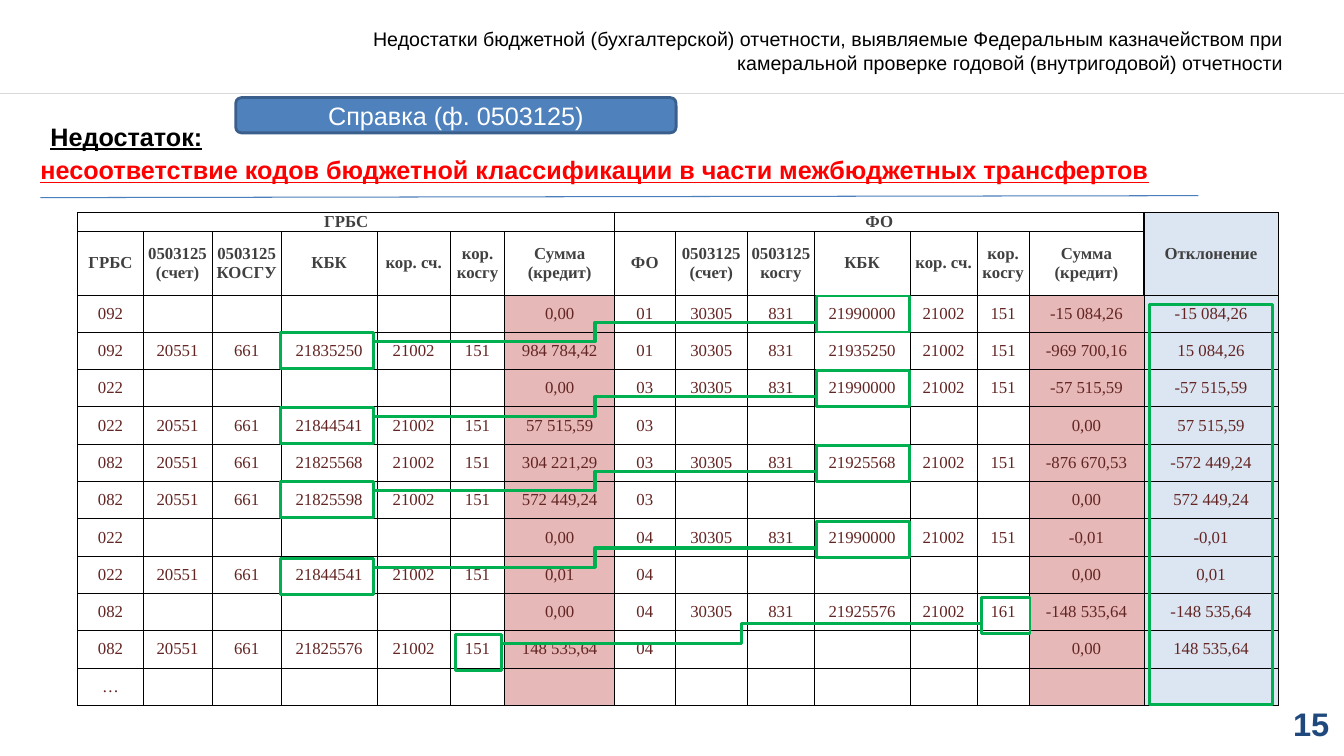
from lxml import etree
from pptx import Presentation
from pptx import util as u
from pptx.dml.color import RGBColor
from pptx.enum import shapes, text
from pptx.oxml.ns import qn

GREEN = RGBColor(0x00, 0xB0, 0x50)
ROSE = RGBColor(0xE6, 0xB8, 0xB7)
PALE_BLUE = RGBColor(0xDC, 0xE6, 0xF2)
BANNER_BLUE = RGBColor(0x4F, 0x81, 0xBD)
BANNER_EDGE = RGBColor(0x3A, 0x5F, 0x8C)
RULE_BLUE = RGBColor(0x4B, 0x7E, 0xBC)
RULE_GREY = RGBColor(0xD9, 0xD9, 0xD9)
NAVY = RGBColor(0x1F, 0x49, 0x7D)
HEADING_GREY = RGBColor(0x40, 0x40, 0x40)
FIGURE_BROWN = RGBColor(0x63, 0x25, 0x23)
RED = RGBColor(0xFF, 0x00, 0x00)
BLACK = RGBColor(0x00, 0x00, 0x00)
WHITE = RGBColor(0xFF, 0xFF, 0xFF)

LEFT, RIGHT = text.PP_ALIGN.LEFT, text.PP_ALIGN.RIGHT
CENTER, JUSTIFY = text.PP_ALIGN.CENTER, text.PP_ALIGN.JUSTIFY

CAPTIONS = [
    ("15", (25.7, 17.75, 7.8, 0.99), 0, RIGHT,
     {"size": u.Pt(23.3), "bold": True}, NAVY),
    ("несоответствие кодов бюджетной классификации в части межбюджетных трансфертов",
     (1.02, 3.89, 31.34, 1.07), 0, JUSTIFY,
     {"size": u.Pt(18), "bold": True, "underline": True}, RED),
    ("Недостаток:", (1.02, 2.92, 6.1, 1.02), 1, LEFT,
     {"size": u.Pt(18), "bold": True, "underline": True}, BLACK),
    ("Недостатки бюджетной (бухгалтерской) отчетности, выявляемые Федеральным "
     "казначейством при камеральной проверке годовой (внутригодовой) отчетности",
     (8.64, 0.56, 23.95, 1.45), 1, RIGHT, {"size": u.Pt(14)}, BLACK),
]
BANNER = ("Справка (ф. 0503125)", (5.94, 2.46, 11.1, 0.89))
RULES = [((0, 2.36), (33.87, 2.36), RULE_GREY, 1),
         ((1.02, 4.98), (30.2, 4.93), RULE_BLUE, 0.75)]

GROUPS = {0: "ГРБС", 7: "ФО", 14: "Отклонение"}
HEADINGS = ["ГРБС", "0503125\n(счет)", "0503125 КОСГУ", "КБК", "кор. сч.", "кор. косгу",
            "Сумма\n(кредит)", "ФО", "0503125\n(счет)", "0503125\nкосгу", "КБК",
            "кор. сч.", "кор. косгу", "Сумма\n(кредит)", ""]
ENTRIES = [
    "092||||||0,00|01|30305|831|21990000|21002|151|-15 084,26|-15 084,26",
    "092|20551|661|21835250|21002|151|984 784,42|01|30305|831|21935250|21002|151|-969 700,16|15 084,26",
    "022||||||0,00|03|30305|831|21990000|21002|151|-57 515,59|-57 515,59",
    "022|20551|661|21844541|21002|151|57 515,59|03||||||0,00|57 515,59",
    "082|20551|661|21825568|21002|151|304 221,29|03|30305|831|21925568|21002|151|-876 670,53|-572 449,24",
    "082|20551|661|21825598|21002|151|572 449,24|03||||||0,00|572 449,24",
    "022||||||0,00|04|30305|831|21990000|21002|151|-0,01|-0,01",
    "022|20551|661|21844541|21002|151|0,01|04||||||0,00|0,01",
    "082||||||0,00|04|30305|831|21925576|21002|161|-148 535,64|-148 535,64",
    "082|20551|661|21825576|21002|151|148 535,64|04||||||0,00|148 535,64",
    "…||||||||||||||",
]
COLUMN_WIDTHS = [1.65, 1.73, 1.75, 2.41, 1.85, 1.37, 2.77, 1.52, 1.83, 1.68, 2.41, 1.7,
                 1.3, 2.9, 3.38]
ROW_HEIGHTS = [0.47, 1.6] + [0.94] * len(ENTRIES)
TABLE_LEFT, TABLE_TOP = 1.96, 5.36
SUM_COLUMNS, DEVIATION_COLUMN = (6, 13), 14
GROUP_STARTS, GROUP_ENDS = (0, 7, 14), (6, 13, 14)

KBK_PAIR = ((7.06, 2.36), (20.57, 2.36))
KOSGU_PAIR = ((11.48, 1.17), (24.74, 1.22))
MISMATCHES = [(8.38, KBK_PAIR), (10.26, KBK_PAIR), (12.14, KBK_PAIR),
              (14.07, KBK_PAIR), (15.98, KOSGU_PAIR)]
FRAME_HEIGHT, FRAME_RISE = 0.91, 0.92
LINK_START, LINK_END = 0.23, 0.66
DEVIATION_FRAME = (28.96, 7.67, 3.1, 10.08)


def cm(values):
    return [u.Cm(value) for value in values]


def write(paragraph, wording, align, look, color):
    paragraph.text = wording
    paragraph.alignment = align
    for run in paragraph.runs:
        for key, value in look.items():
            setattr(run.font, key, value)
        run.font.color.rgb = color


def draw_line(kind, start, end, color, width):
    line = slide.shapes.add_connector(kind, *cm(start + end))
    line.line.color.rgb = color
    line.line.width = u.Pt(width)
    etree.SubElement(line._element.spPr, qn("a:effectLst"))


def draw_frame(box):
    frame = slide.shapes.add_shape(shapes.MSO_SHAPE.RECTANGLE, *cm(box))
    frame.shadow.inherit = False
    frame.fill.background()
    frame.line.color.rgb = GREEN
    frame.line.width = u.Pt(2)


def draw_borders(cell, widths):
    properties = cell._tc.get_or_add_tcPr()
    for place, (side, width) in enumerate(widths.items()):
        border = etree.Element(qn("a:ln" + side), w=str(u.Pt(width)))
        fill = etree.SubElement(border, qn("a:solidFill"))
        etree.SubElement(fill, qn("a:srgbClr"), val=str(BLACK))
        properties.insert(place, border)


def fill_cell(row, column, wording):
    cell = table.cell(row, column)
    for key in ("margin_left", "margin_right", "margin_top", "margin_bottom"):
        setattr(cell, key, 0)
    cell.vertical_anchor = text.MSO_ANCHOR.MIDDLE
    heading = row < 2
    look = {"size": u.Pt(12), "name": "Times New Roman", "bold": heading}
    write(cell.text_frame.paragraphs[0], wording, CENTER, look,
          HEADING_GREY if heading else FIGURE_BROWN)
    if column == DEVIATION_COLUMN:
        cell.fill.solid()
        cell.fill.fore_color.rgb = PALE_BLUE
    elif column in SUM_COLUMNS and not heading:
        cell.fill.solid()
        cell.fill.fore_color.rgb = ROSE
    else:
        cell.fill.background()
    heavy = {"L": heading and column in GROUP_STARTS,
             "R": row == 0 or heading and column in GROUP_ENDS,
             "T": row == 0, "B": False}
    draw_borders(cell, {side: 1 if thick else 0.5 for side, thick in heavy.items()})


deck = Presentation()
deck.slide_width, deck.slide_height = cm((33.87, 19.05))
slide = deck.slides.add_slide(deck.slide_layouts[6])

entry_table = slide.shapes.add_table(
    len(ROW_HEIGHTS), len(COLUMN_WIDTHS),
    *cm((TABLE_LEFT, TABLE_TOP, sum(COLUMN_WIDTHS), sum(ROW_HEIGHTS))))
table = entry_table.table
table.first_row = table.horz_banding = False
for column, width in zip(table.columns, COLUMN_WIDTHS):
    column.width = u.Cm(width)
for row, height in zip(table.rows, ROW_HEIGHTS):
    row.height = u.Cm(height)
group_row = [GROUPS.get(column, "") for column in range(len(COLUMN_WIDTHS))]
for row, wordings in enumerate([group_row, HEADINGS] + [e.split("|") for e in ENTRIES]):
    for column, wording in enumerate(wordings):
        fill_cell(row, column, wording)
for first, last in ((0, (0, 6)), (7, (0, 13)), (14, (1, 14))):
    table.cell(0, first).merge(table.cell(*last))

for top, ((left, width), (far_left, far_width)) in MISMATCHES:
    far_top = top - FRAME_RISE
    draw_frame((left, top, width, FRAME_HEIGHT))
    draw_line(shapes.MSO_CONNECTOR.ELBOW, (left + width, top + LINK_START),
              (far_left, far_top + LINK_END), GREEN, 2.25)
    draw_frame((far_left, far_top, far_width, FRAME_HEIGHT))
draw_frame(DEVIATION_FRAME)

for start, end, color, width in RULES:
    draw_line(shapes.MSO_CONNECTOR.STRAIGHT, start, end, color, width)

for wording, box, inset, align, look, color in CAPTIONS:
    frame = slide.shapes.add_textbox(*cm(box)).text_frame
    frame.word_wrap = True
    if not inset:
        for key in ("margin_left", "margin_right", "margin_top", "margin_bottom"):
            setattr(frame, key, 0)
    write(frame.paragraphs[0], wording, align, {"name": "Arial", **look}, color)

banner_text, banner_box = BANNER
banner = slide.shapes.add_shape(shapes.MSO_SHAPE.ROUNDED_RECTANGLE, *cm(banner_box))
banner.shadow.inherit = False
banner.fill.solid()
banner.fill.fore_color.rgb = BANNER_BLUE
banner.line.color.rgb = BANNER_EDGE
banner.line.width = u.Pt(2)
banner.text_frame.vertical_anchor = text.MSO_ANCHOR.MIDDLE
write(banner.text_frame.paragraphs[0], banner_text, CENTER,
      {"name": "Arial", "size": u.Pt(18)}, WHITE)

deck.save("out.pptx")
